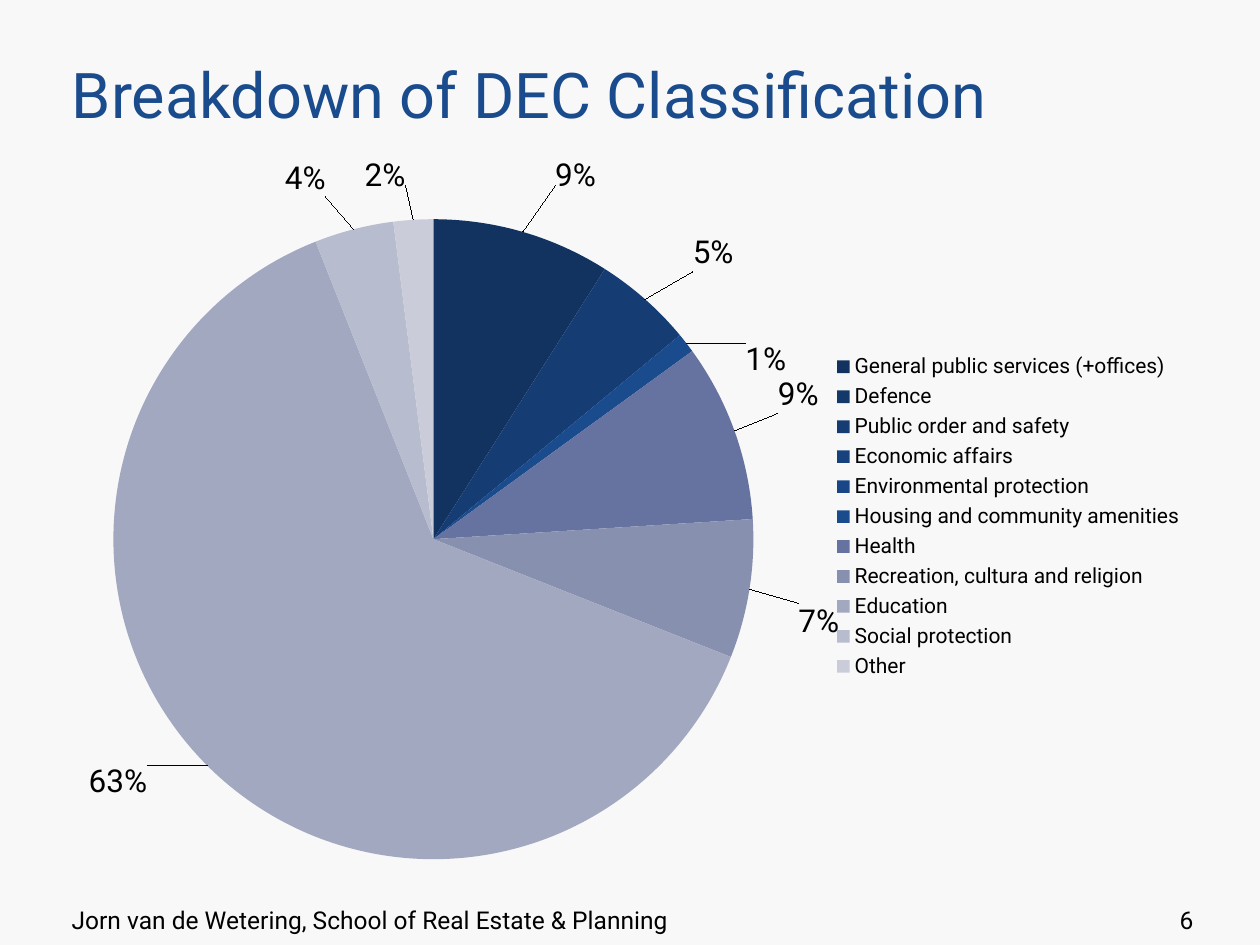
from math import cos, pi, sin

from lxml import etree
from pptx import Presentation
from pptx.chart.data import CategoryChartData
from pptx.dml.color import RGBColor
from pptx.enum.chart import XL_CHART_TYPE, XL_LABEL_POSITION, XL_LEGEND_POSITION
from pptx.enum.text import MSO_ANCHOR, PP_ALIGN
from pptx.oxml import parse_xml
from pptx.oxml.ns import nsdecls, qn
from pptx.util import Inches, Pt

PIE = XL_CHART_TYPE.PIE
OUTSIDE = XL_LABEL_POSITION.OUTSIDE_END
RIGHT_SIDE = XL_LEGEND_POSITION.RIGHT
LEFT, RIGHT = PP_ALIGN.LEFT, PP_ALIGN.RIGHT
BOTTOM, TOP = MSO_ANCHOR.BOTTOM, MSO_ANCHOR.TOP
FONT = "Roboto"

TITLE_BOX = (0.47, 0.3, 7.66, 0.79)
CHART_BOX = (0.47, 1.25, 9.03, 5.7)
FOOTER_BOX = (0.47, 7.13, 7.29, 0.37)
NUMBER_BOX = (8.83, 7.13, 0.74, 0.37)
PIE_INSET = (0.43, 0.49)
PIE_DIAMETER = 5.08

# Category, share, slice colour, label corner nearest the pie (slide inches)
SLICES = [
    ("General public services (+offices)", 9, "12335F", (4.39, 1.53)),
    ("Defence", 0, "13386A", (5.11, 1.95)),
    ("Public order and safety", 5, "153D74", (5.46, 2.2)),
    ("Economic affairs", 0, "17427E", (5.79, 2.37)),
    ("Environmental protection", 0, "184687", (5.94, 2.71)),
    ("Housing and community amenities", 1, "194B8D", (5.87, 3.04)),
    ("Health", 9, "6673A0", (6.12, 3.3)),
    ("Recreation, cultura and religion", 7, "8890B0", (6.28, 4.78)),
    ("Education", 63, "A2A8C0", (1.21, 6.02)),
    ("Social protection", 4, "B7BCCF", (2.6, 1.62)),
    ("Other", 2, "CACCDA", (3.06, 1.53)),
]


def color(value):
    return RGBColor.from_string(value)


def write(frame, text, size=14, fill="000000", align=LEFT, anchor=TOP, wrap=True):
    frame.word_wrap = wrap
    frame.vertical_anchor = anchor
    para = frame.paragraphs[0]
    para.alignment = align
    span = para.add_run()
    span.text = text
    span.font.name = FONT
    span.font.size = Pt(size)
    span.font.color.rgb = color(fill)


def add_title(page, box, text):
    title = page.shapes.title
    title.left, title.top, title.width, title.height = map(Inches, box)
    write(title.text_frame, text, size=36, fill="194B8D", anchor=BOTTOM, wrap=False)


def add_note(page, box, text, **style):
    note = page.shapes.add_textbox(*map(Inches, box))
    write(note.text_frame, text, **style)


def manual_layout(**settings):
    layout = parse_xml(f"<c:layout {nsdecls('c')}><c:manualLayout/></c:layout>")
    for name, value in settings.items():
        etree.SubElement(layout[0], qn(f"c:{name}")).set("val", str(value))
    return layout


def place_pie(chart, box):
    plot_area = chart._chartSpace.chart.plotArea
    for old in plot_area.findall(qn("c:layout")):
        plot_area.remove(old)
    plot_area.insert(0, manual_layout(
        layoutTarget="inner", xMode="edge", yMode="edge",
        x=round(PIE_INSET[0] / box[2], 4), y=round(PIE_INSET[1] / box[3], 4),
        w=round(PIE_DIAMETER / box[2], 4), h=round(PIE_DIAMETER / box[3], 4)))


def format_slices(series, box):
    radius = PIE_DIAMETER / 2
    center_x = box[0] + PIE_INSET[0] + radius
    center_y = box[1] + PIE_INSET[1] + radius
    total = sum(share for _, share, _, _ in SLICES)
    start = 0
    for index, (_, share, fill, corner) in enumerate(SLICES):
        point = series.points[index]
        point.format.fill.solid()
        point.format.fill.fore_color.rgb = color(fill)
        point.format.line.fill.background()
        angle = 2 * pi * (start + share / 2) / total
        start += share
        shift_x = corner[0] - center_x - radius * sin(angle)
        shift_y = corner[1] - center_y + radius * cos(angle)
        point.data_label.font.size = Pt(18)
        point.data_label.position = OUTSIDE
        label = series._element.xpath(f"c:dLbls/c:dLbl[c:idx/@val='{index}']")[0]
        label.find(qn("c:idx")).addnext(manual_layout(
            x=round(shift_x / box[2], 4), y=round(shift_y / box[3], 4)))
        label.find(qn("c:showVal")).set("val", "0")
        label.find(qn("c:showPercent")).set("val", "1")


def add_pie(page, box):
    data = CategoryChartData()
    data.categories = [name for name, _, _, _ in SLICES]
    data.add_series("Series 1", [share for _, share, _, _ in SLICES])
    chart = page.shapes.add_chart(PIE, *map(Inches, box), data).chart
    chart.has_title = False
    chart.font.name = FONT
    chart.font.size = Pt(10)
    chart.font.color.rgb = color("000000")
    chart.has_legend = True
    chart.legend.position = RIGHT_SIDE
    chart.legend.include_in_layout = False
    chart.legend.font.size = Pt(12)
    plot = chart.plots[0]
    plot.vary_by_categories = True
    series = plot.series[0]
    labels = series.data_labels
    labels.show_value = False
    labels.show_percentage = True
    labels.position = OUTSIDE
    labels.font.size = Pt(18)
    place_pie(chart, box)
    format_slices(series, box)


def main():
    deck = Presentation()
    deck.slide_width, deck.slide_height = Inches(10), Inches(7.5)
    page = deck.slides.add_slide(deck.slide_layouts[5])
    page.background.fill.solid()
    page.background.fill.fore_color.rgb = color("F8F8F8")
    add_note(page, FOOTER_BOX, "Jorn van de Wetering, School of Real Estate & Planning")
    add_title(page, TITLE_BOX, "Breakdown of DEC Classification")
    add_note(page, NUMBER_BOX, "6", align=RIGHT)
    add_pie(page, CHART_BOX)
    deck.save("out.pptx")


if __name__ == "__main__":
    main()
